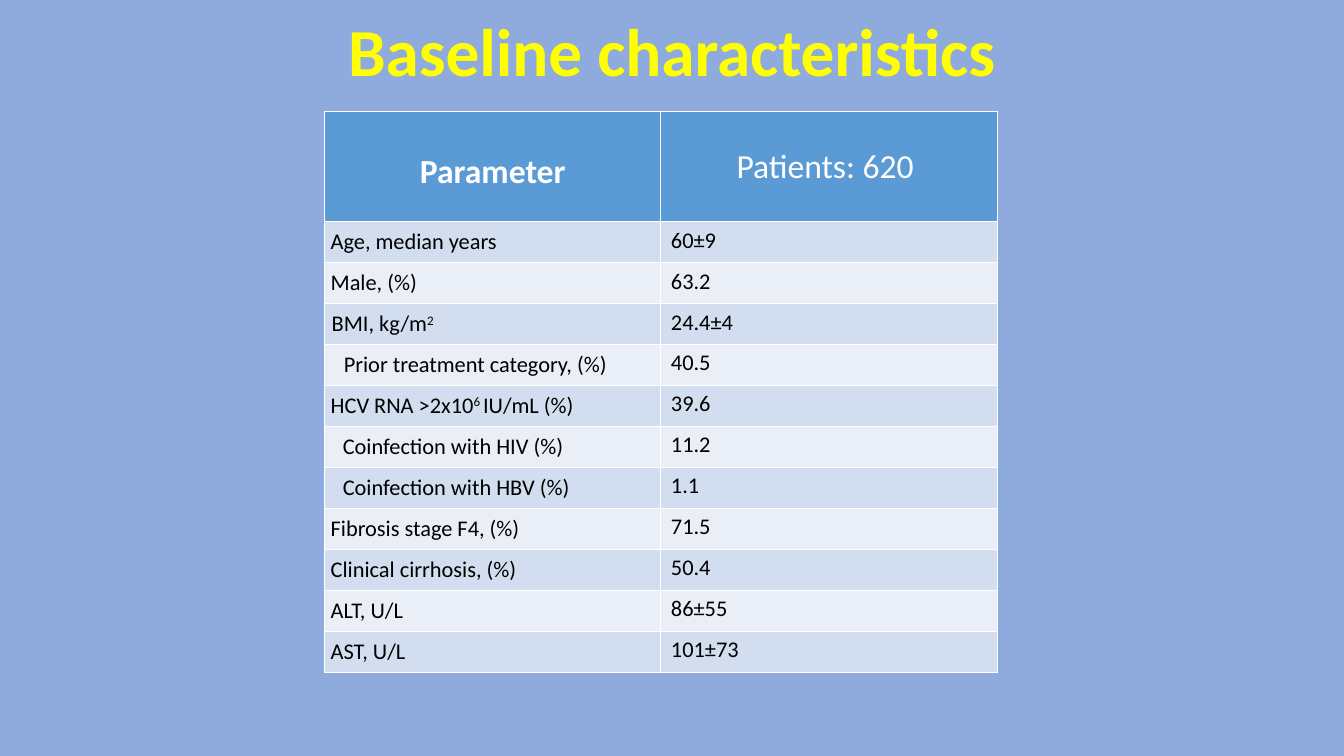
from lxml import etree
from pptx import Presentation
from pptx.dml.color import RGBColor
from pptx.enum.text import MSO_ANCHOR, PP_ALIGN
from pptx.oxml.ns import qn
from pptx.util import Inches, Pt

CENTER, LEFT = PP_ALIGN.CENTER, PP_ALIGN.LEFT
TOP, MIDDLE = MSO_ANCHOR.TOP, MSO_ANCHOR.MIDDLE
TITLE_ONLY = 5
FONT = "Calibri"
WHITE, BLACK, YELLOW = "FFFFFF", "000000", "FFFF00"
BACKGROUND, HEADER_FILL = "8FAADC", "5B9BD5"
BAND_FILLS = ("D2DEEF", "EAEFF7")
SLIDE_WIDTH, SLIDE_HEIGHT = Inches(13.33), Inches(7.5)
TABLE_LEFT, TABLE_TOP, TABLE_WIDTH = Inches(3.22), Inches(1.11), Inches(6.67)
HEADER_HEIGHT, BODY_HEIGHT = Inches(1.09), Inches(4.47)

CHARACTERISTICS = [
    (["Age, median years"], 0, "60±9"),
    (["Male, (%)"], 0, "63.2"),
    (["BMI, kg/m", "2"], 0.01, "24.4±4"),
    (["Prior treatment category, (%)"], 0.13, "40.5"),
    (["HCV RNA >2x10", "6 ", "IU/mL (%)"], 0, "39.6"),
    (["Coinfection with HIV (%)"], 0.12, "11.2"),
    (["Coinfection with HBV (%)"], 0.12, "1.1"),
    (["Fibrosis stage F4, (%)"], 0, "71.5"),
    (["Clinical cirrhosis, (%)"], 0, "50.4"),
    (["ALT, U/L"], 0, "86±55"),
    (["AST, U/L"], 0, "101±73"),
]


def paint(fill, color):
    """Give a fill one solid colour."""
    fill.solid()
    fill.fore_color.rgb = RGBColor.from_string(color)


def write(frame, parts, size, color, bold=False, align=LEFT):
    """Write one paragraph in which every second part is superscript."""
    paragraph = frame.paragraphs[0]
    paragraph.alignment = align
    font = paragraph.font
    font.name, font.size, font.bold = FONT, Pt(size), bold
    paint(font.fill, color)
    for index, part in enumerate(parts):
        run = paragraph.add_run()
        run.text = part
        if index % 2:
            run._r.get_or_add_rPr().set("baseline", "30000")


def add_borders(cell):
    """Draw thin white lines on all four sides of a cell."""
    properties = cell._tc.get_or_add_tcPr()
    for side in ("a:lnL", "a:lnR", "a:lnT", "a:lnB"):
        line = etree.SubElement(properties, qn(side), w=str(Pt(1)))
        solid = etree.SubElement(line, qn("a:solidFill"))
        etree.SubElement(solid, qn("a:srgbClr"), val=WHITE)


def style_cell(cell, color, anchor, margins):
    """Set the borders, fill, anchor and left, top, right, bottom margins."""
    add_borders(cell)
    paint(cell.fill, color)
    cell.vertical_anchor = anchor
    (cell.margin_left, cell.margin_top,
     cell.margin_right, cell.margin_bottom) = map(Inches, margins)


def add_title(slide, text):
    """Place the heading across the top of the slide."""
    title = slide.shapes.title
    title.left, title.top = 0, Inches(0.04)
    title.width, title.height = SLIDE_WIDTH, Inches(0.91)
    title.text_frame.vertical_anchor = MIDDLE
    write(title.text_frame, [text], 48, YELLOW, True, CENTER)


def add_characteristics(slide):
    """Add the table of patient characteristics."""
    table = slide.shapes.add_table(
        len(CHARACTERISTICS) + 1, 2, TABLE_LEFT, TABLE_TOP,
        TABLE_WIDTH, HEADER_HEIGHT + BODY_HEIGHT).table
    table.rows[0].height = HEADER_HEIGHT
    parameter, patients = table.cell(0, 0), table.cell(0, 1)
    style_cell(parameter, HEADER_FILL, MIDDLE, (0.06, 0.1, 0.06, 0))
    write(parameter.text_frame, ["Parameter"], 24, WHITE, True, CENTER)
    style_cell(patients, HEADER_FILL, MIDDLE, (0.1, 0.05, 0.1, 0.05))
    write(patients.text_frame, ["Patients: 620 "], 24, WHITE, align=CENTER)
    for row, (label, indent, value) in enumerate(CHARACTERISTICS, 1):
        table.rows[row].height = BODY_HEIGHT // len(CHARACTERISTICS)
        band = BAND_FILLS[(row - 1) % 2]
        label_cell, value_cell = table.cell(row, 0), table.cell(row, 1)
        style_cell(label_cell, band, MIDDLE, (0.06 + indent, 0, 0.06, 0))
        write(label_cell.text_frame, label, 16, BLACK)
        style_cell(value_cell, band, TOP, (0.1, 0.05, 0.1, 0.05))
        write(value_cell.text_frame, [value], 16, BLACK)


def main():
    """Build and save the slide."""
    presentation = Presentation()
    presentation.slide_width = SLIDE_WIDTH
    presentation.slide_height = SLIDE_HEIGHT
    slide = presentation.slides.add_slide(
        presentation.slide_layouts[TITLE_ONLY])
    paint(slide.background.fill, BACKGROUND)
    add_title(slide, "Baseline characteristics")
    add_characteristics(slide)
    presentation.save("out.pptx")


if __name__ == "__main__":
    main()
